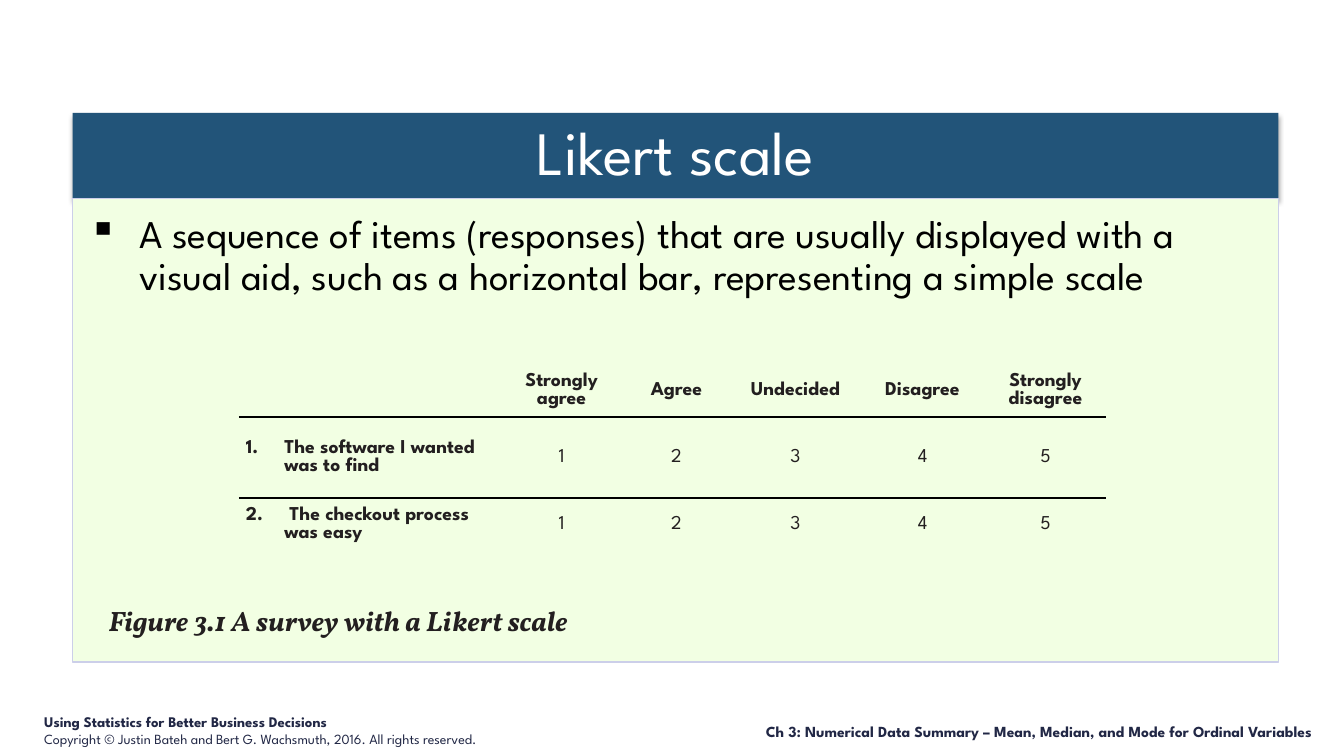
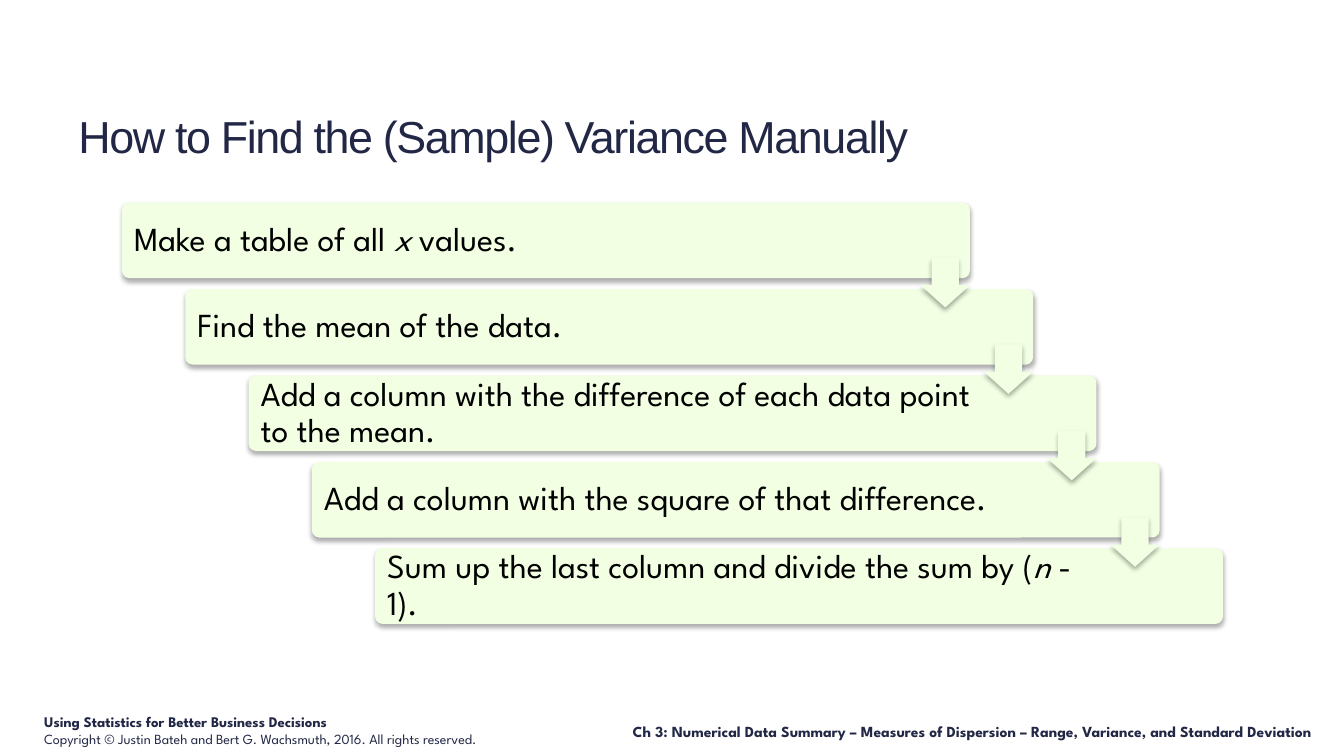
from pptx import Presentation
from pptx.dml.color import RGBColor
from pptx.enum import shapes, text
from pptx.oxml import parse_xml
from pptx.oxml.ns import nsdecls, qn
from pptx.util import Inches, Pt

NAVY, BLUE, MINT = "212745", "225479", "F2FFE3"
LAVENDER, INK, BLACK, WHITE = "CCCFE9", "231F20", "000000", "FFFFFF"
FONT = "League Spartan"
LEFT, CENTER, RIGHT = text.PP_ALIGN.LEFT, text.PP_ALIGN.CENTER, text.PP_ALIGN.RIGHT
TOP, MIDDLE, BOTTOM = text.MSO_ANCHOR.TOP, text.MSO_ANCHOR.MIDDLE, text.MSO_ANCHOR.BOTTOM
PLAIN_TABLE = "{2D5ABB26-0587-4C30-8999-92F81FD0307C}"


def paint(fill, colour):
    fill.solid()
    fill.fore_color.rgb = RGBColor.from_string(colour)


def write(frame, *pieces, size, colour=BLACK, font=FONT, bold=False, italic=False,
          align=LEFT, anchor=TOP, inset=None, line=None, before=None,
          indent=0, bullet=None, tracking=0):
    """Add one paragraph; every second piece has the opposite slant."""
    para = frame.add_paragraph() if frame.text else frame.paragraphs[0]
    frame.word_wrap = True
    frame.vertical_anchor = anchor
    if inset:
        frame.margin_left, frame.margin_top, frame.margin_right, frame.margin_bottom = map(Inches, inset)
    para.alignment, para.line_spacing, para.space_before = align, line, before
    if bullet:
        props = para._p.get_or_add_pPr()
        props.set("marL", str(Inches(indent)))
        props.set("indent", str(-Inches(indent)))
        props.append(parse_xml(f"<a:{bullet} {nsdecls('a')}/>"))
    for number, piece in enumerate(pieces):
        span = para.add_run()
        span.text = piece
        span.font.name, span.font.size, span.font.bold = font, Pt(size), bold
        span.font.italic = italic != (number % 2 == 1)
        paint(span.font.fill, colour)
        if tracking:
            span.font._element.set("spc", str(tracking * 100))


deck = Presentation()
deck.slide_width, deck.slide_height = Inches(13.33), Inches(7.5)

# Shared footers: left edge and width of the chapter line, then its topic
chapters = [
    (5.79, 7.33, "Mean, Median, and Mode for Ordinal Variables"),
    (5.48, 7.64, "Measures of Dispersion – Range, Variance, and Standard Deviation"),
]
for left, width, topic in chapters:
    page = deck.slides.add_slide(deck.slide_layouts[6])
    paint(page.background.fill, WHITE)
    credit = page.shapes.add_textbox(Inches(0.34), Inches(7.02), Inches(5.28), Inches(0.4)).text_frame
    write(credit, "Using Statistics for Better Business Decisions", size=10.5, colour=NAVY, bold=True)
    write(credit, "Copyright © Justin Bateh and Bert G. Wachsmuth, 2016. All rights reserved.",
          size=10, colour=NAVY)
    chapter = page.shapes.add_textbox(Inches(left), Inches(7.11), Inches(width), Inches(0.29))
    write(chapter.text_frame, f"Ch 3: Numerical Data Summary – {topic}",
          size=11, colour=NAVY, bold=True, align=RIGHT, anchor=BOTTOM)
likert_page, variance_page = deck.slides
raised = []

# Likert scale: title band and panel
band = likert_page.shapes.add_shape(
    shapes.MSO_SHAPE.RECTANGLE, Inches(0.72), Inches(1.12), Inches(11.96), Inches(0.85))
paint(band.fill, BLUE)
write(band.text_frame, "Likert scale", size=44, colour=WHITE, align=CENTER, anchor=MIDDLE,
      inset=(0.22, 0.12, 0.22, 0.12), line=0.9)
raised.append(band)

panel = likert_page.shapes.add_shape(
    shapes.MSO_SHAPE.RECTANGLE, Inches(0.72), Inches(1.97), Inches(11.96), Inches(4.6))
panel.shadow.inherit = False
paint(panel.fill, MINT)
paint(panel.line.fill, LAVENDER)
panel.line.width = Pt(1)
write(panel.text_frame,
      "A sequence of items (responses) that are usually displayed with a visual aid, "
      "such as a horizontal bar, representing a simple scale",
      size=28, inset=(0.16, 0.16, 0.21, 0.24), line=0.9, indent=0.5, bullet='buChar char="▪"')

caption = likert_page.shapes.add_textbox(Inches(0.98), Inches(5.94), Inches(6.78), Inches(0.44))
write(caption.text_frame, "Figure 3.1 A survey with a Likert scale",
      size=20, colour=INK, font="Vollkorn", bold=True, italic=True)

# Likert scale: survey table
scores = ["1", "2", "3", "4", "5"]
survey = [
    ["", "Strongly agree", "Agree", "Undecided", "Disagree", "Strongly disagree"],
    ["The software I wanted was to find", *scores],
    [" The checkout process was easy", *scores],
]
table = likert_page.shapes.add_table(
    3, 6, Inches(2.37), Inches(3.61), Inches(8.6), Inches(1.86)).table
table.first_row = table.horz_banding = False
table._tbl.tblPr.find(qn("a:tableStyleId")).text = PLAIN_TABLE
for column, width in zip(table.columns, [2.6, 1.2, 1.08, 1.28, 1.24, 1.2]):
    column.width = Inches(width)
for row, height in zip(table.rows, [0.53, 0.8, 0.53]):
    row.height = Inches(height)
for r, entries in enumerate(survey):
    for c, entry in enumerate(entries):
        cell = table.cell(r, c)
        cell.fill.background()
        cell.vertical_anchor = MIDDLE
        cell.margin_left = cell.margin_right = Inches(0.07)
        cell.margin_top = cell.margin_bottom = 0
        if entry:
            question = c == 0
            write(cell.text_frame, entry, size=14, colour=INK, bold=question or r == 0,
                  align=LEFT if question else CENTER, anchor=MIDDLE, before=Pt(5.3), indent=0.38,
                  bullet=f'buAutoNum type="arabicPeriod" startAt="{r}"' if question else None)
        if r < 2:
            edge = "lnB" if r == 0 else "lnT"
            cell._tc.get_or_add_tcPr().insert(0, parse_xml(
                f'<a:{edge} {nsdecls("a")} w="{Pt(1.5)}"><a:solidFill>'
                f'<a:srgbClr val="{BLACK}"/></a:solidFill></a:{edge}>'))

# Sample variance: title
title = variance_page.shapes.add_textbox(Inches(0.68), Inches(1.03), Inches(11.96), Inches(0.98))
write(title.text_frame, "How to Find the (Sample) Variance Manually",
      size=32, colour=NAVY, font="Arial", tracking=-1)

# Sample variance: staircase of steps, then the arrows between them
steps = [
    ["Make a table of all ", "x ", "values."],
    ["Find the mean of the data."],
    ["Add a column with the difference of each data point to the mean."],
    ["Add a column with the square of that difference."],
    ["Sum up the last column and divide the sum by (", "n ", "- 1)."],
]
shift, drop = 2.51 / 4, 3.43 / 4
for i, pieces in enumerate(steps):
    box = variance_page.shapes.add_shape(
        shapes.MSO_SHAPE.ROUNDED_RECTANGLE,
        Inches(1.21 + i * shift), Inches(2.01 + i * drop), Inches(8.41), Inches(0.75))
    box.adjustments[0] = 0.1
    paint(box.fill, MINT)
    write(box.text_frame, *pieces, size=24, anchor=MIDDLE, line=0.9,
          inset=(0.1, 0.1, 0.96 if i == 0 else 1.22, 0.1))
    raised.append(box)
for i in range(len(steps) - 1):
    arrow = variance_page.shapes.add_shape(
        shapes.MSO_SHAPE.DOWN_ARROW,
        Inches(9.13 + i * shift), Inches(2.56 + i * drop), Inches(0.49), Inches(0.49))
    arrow.adjustments[0], arrow.adjustments[1] = 0.55, 0.45
    paint(arrow.fill, MINT)
    raised.append(arrow)

# Soft shadow below the band, the steps and the arrows
for shape in raised:
    shape.line.fill.background()
    shape.shadow.inherit = False
    shape.element.spPr.find(qn("a:effectLst")).append(parse_xml(
        f'<a:outerShdw {nsdecls("a")} blurRad="{Pt(3.5)}" dist="{Pt(2.2)}" dir="5400000" '
        f'rotWithShape="0"><a:srgbClr val="{BLACK}"><a:alpha val="32000"/></a:srgbClr></a:outerShdw>'))

deck.save("out.pptx")
